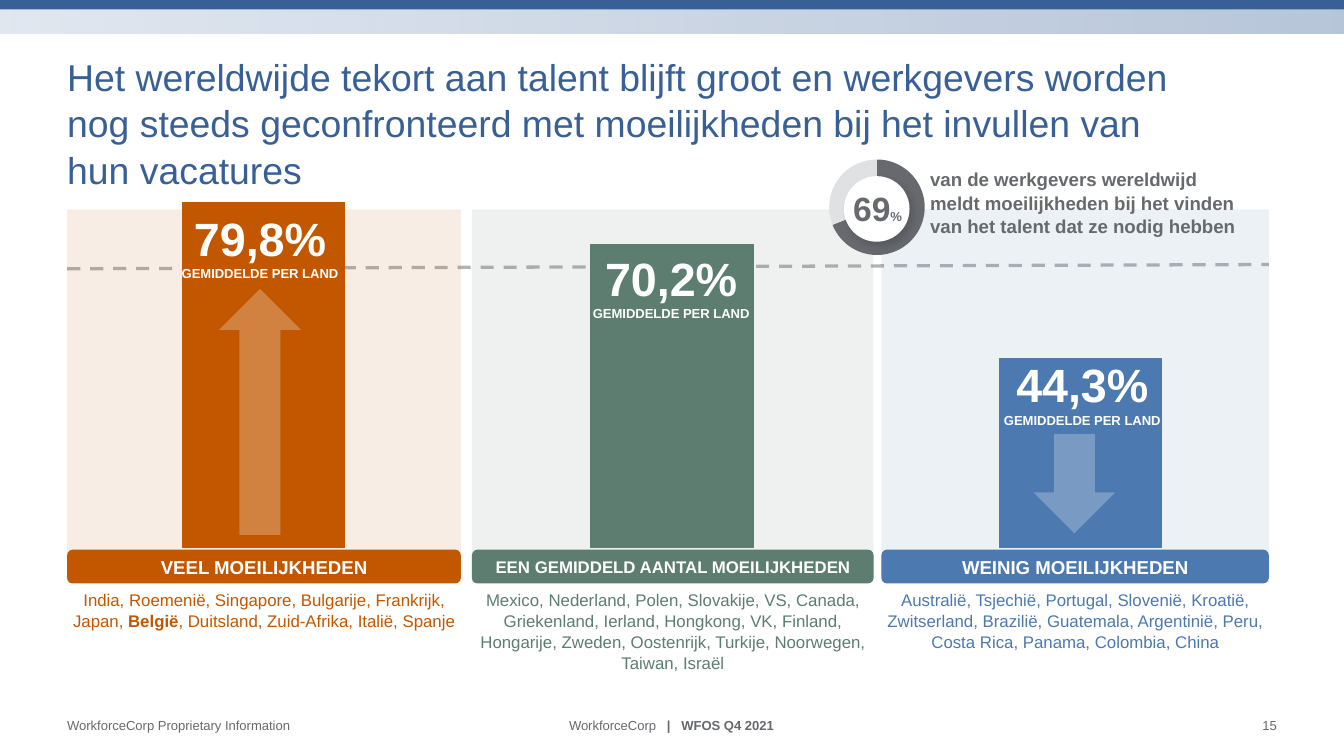
from dataclasses import dataclass
from typing import NamedTuple

from lxml import etree
from pptx import Presentation
from pptx.chart.data import CategoryChartData
from pptx.dml.color import RGBColor
from pptx.enum.chart import XL_CHART_TYPE as ChartType
from pptx.enum.dml import MSO_LINE_DASH_STYLE as Dash
from pptx.enum.shapes import MSO_CONNECTOR as Connector, MSO_SHAPE as Shape
from pptx.enum.text import MSO_ANCHOR as Anchor, PP_ALIGN as Align
from pptx.oxml import parse_xml
from pptx.oxml.ns import nsdecls, qn
from pptx.util import Cm, Pt

FONT = "Arial"
NAVY, ORANGE, GREEN, BLUE = "386097", "C25700", "5C7D70", "4C79AF"
GRAY, PALE_GRAY, WHITE = "67696F", "E0E1E3", "FFFFFF"
MARGIN = 1.27
BAR_STEP = 7.77


class Box(NamedTuple):
    left: float
    top: float
    width: float
    height: float

    def lengths(self):
        return [Cm(value) for value in self]


class Run(NamedTuple):
    text: str
    size: float
    bold: bool = False


@dataclass
class Group:
    label: str
    label_size: float
    color: str
    left: float
    width: float
    share: str
    share_top: float
    bar_value: int
    countries: list[Run]


GROUPS = [
    Group("VEEL MOEILIJKHEDEN", 10, ORANGE, MARGIN, 7.44, "79,8%", 3.96, 100, [
        Run("India, Roemenië, Singapore, Bulgarije, Frankrijk, Japan, ", 9),
        Run("België", 9, True),
        Run(", Duitsland, Zuid-Afrika, Italië, Spanje", 9)]),
    Group("EEN GEMIDDELD AANTAL MOEILIJKHEDEN", 9, GREEN, 8.92, 7.59, "70,2%", 4.72, 88, [
        Run("Mexico, Nederland, Polen, Slovakije, VS, Canada, Griekenland, Ierland, "
            "Hongkong, VK, Finland, Hongarije, Zweden, Oostenrijk, Turkije, "
            "Noorwegen, Taiwan, Israël", 9)]),
    Group("WEINIG MOEILIJKHEDEN", 10, BLUE, 16.66, 7.32, "44,3%", 6.73, 55, [
        Run("Australië, Tsjechië, Portugal, Slovenië, Kroatië, Zwitserland, Brazilië, "
            "Guatemala, Argentinië, Peru, Costa Rica, Panama, Colombia, China", 9)]),
]


def rgb(color: str) -> RGBColor:
    return RGBColor.from_string(color)


def set_opacity(properties, percents: list[int]) -> None:
    """Give each colour below the properties element its opacity, in order."""
    for color, percent in zip(properties.iter(qn("a:srgbClr")), percents):
        etree.SubElement(color, qn("a:alpha")).set("val", str(percent * 1000))


def write(shape, runs: list[Run], color: str, align=Align.LEFT, spacing=None) -> None:
    paragraph = shape.text_frame.paragraphs[0]
    paragraph.alignment = align
    if spacing:
        paragraph.line_spacing = spacing
    paragraph.font.name = FONT
    paragraph.font.color.rgb = rgb(color)
    sizes, weights = {run.size for run in runs}, {run.bold for run in runs}
    if len(sizes) == 1:
        paragraph.font.size = Pt(runs[0].size)
    if len(weights) == 1:
        paragraph.font.bold = runs[0].bold
    for item in runs:
        if item.text == "\v":
            paragraph.add_line_break()
            continue
        run = paragraph.add_run()
        run.text = item.text
        if len(sizes) > 1:
            run.font.size = Pt(item.size)
        if len(weights) > 1:
            run.font.bold = item.bold


def add_text(slide, box: Box, runs: list[Run], color: str, align=Align.LEFT,
             anchor=Anchor.TOP, spacing=None, wrap=True) -> None:
    text_box = slide.shapes.add_textbox(*box.lengths())
    frame = text_box.text_frame
    frame.margin_left = frame.margin_right = frame.margin_top = frame.margin_bottom = 0
    frame.word_wrap = wrap
    frame.vertical_anchor = anchor
    write(text_box, runs, color, align, spacing)


def add_block(slide, kind, box: Box, color: str, opacity: int = 100):
    shape = slide.shapes.add_shape(kind, *box.lengths())
    shape.shadow.inherit = False
    shape.line.fill.background()
    shape.fill.solid()
    shape.fill.fore_color.rgb = rgb(color)
    if opacity < 100:
        set_opacity(shape.fill._xPr, [opacity])
    return shape


def add_plain_chart(slide, kind, box: Box, values: list[int], colors: list[str], plot: Box):
    """Add a chart without title or legend; plot is the inner area in fractions."""
    data = CategoryChartData()
    data.categories = [str(number + 1) for number in range(len(values))]
    data.add_series("Series 1", values)
    chart = slide.shapes.add_chart(kind, *box.lengths(), data).chart
    chart.has_legend = chart.has_title = False
    chart.font.name, chart.font.size = FONT, Pt(10)
    chart.font.color.rgb = rgb(NAVY)
    chart.plots[0].vary_by_categories = False
    for index, color in enumerate(colors):
        fill = chart.plots[0].series[0].points[index].format.fill
        fill.solid()
        fill.fore_color.rgb = rgb(color)
    plot_area = chart._chartSpace.find(".//" + qn("c:plotArea"))
    for layout in plot_area.findall(qn("c:layout")):
        plot_area.remove(layout)
    plot_area.insert(0, parse_xml(
        f'<c:layout {nsdecls("c")}><c:manualLayout><c:layoutTarget val="inner"/>'
        '<c:xMode val="edge"/><c:yMode val="edge"/>'
        f'<c:x val="{plot.left}"/><c:y val="{plot.top}"/>'
        f'<c:w val="{plot.width}"/><c:h val="{plot.height}"/>'
        '</c:manualLayout></c:layout>'))
    return chart


def add_header(slide) -> None:
    band = add_block(slide, Shape.RECTANGLE, Box(0, 0, 25.4, 0.64), NAVY)
    band.fill.gradient()
    band.fill.gradient_angle = 0
    for stop in band.fill.gradient_stops:
        stop.color.rgb = rgb(NAVY)
    set_opacity(band.fill._xPr, [15, 36])
    add_block(slide, Shape.RECTANGLE, Box(0, 0, 25.4, 0.18), NAVY)
    title = ["Het wereldwijde tekort aan talent blijft groot en werkgevers worden", "\v",
             "nog steeds geconfronteerd met moeilijkheden bij het invullen van", "\v",
             "hun vacatures"]
    add_text(slide, Box(MARGIN, 1.14, 22.86, 2.34), [Run(text, 20) for text in title],
             NAVY, anchor=Anchor.MIDDLE, spacing=1.04)


def add_footer(slide) -> None:
    for left, width, align, runs in [
        (MARGIN, 4.95, Align.LEFT, [Run("WorkforceCorp Proprietary Information", 7)]),
        (9.45, 6.48, Align.CENTER, [Run("WorkforceCorp   ", 7), Run("|   WFOS Q4 2021", 7, True)]),
        (22.15, 1.98, Align.RIGHT, [Run("15", 7)]),
    ]:
        add_text(slide, Box(left, 13.56, width, 0.3), runs, GRAY, align, Anchor.MIDDLE)


def add_average_line(slide) -> None:
    line = slide.shapes.add_connector(Connector.STRAIGHT, Cm(MARGIN), Cm(5.08), Cm(23.98), Cm(5))
    line.line.color.rgb = rgb(GRAY)
    line.line.width = Pt(1.75)
    line.line.dash_style = Dash.DASH
    properties = line._element.spPr
    set_opacity(properties, [50])
    etree.SubElement(properties, qn("a:effectLst"))


def add_bars(slide) -> None:
    for group in GROUPS:
        add_block(slide, Shape.RECTANGLE, Box(group.left, 3.96, group.width, 7.04), group.color, 10)
    chart = add_plain_chart(slide, ChartType.COLUMN_STACKED, Box(0.64, 2.82, 24.13, 7.7),
                            [group.bar_value for group in GROUPS],
                            [group.color for group in GROUPS], Box(0.02, 0.13, 0.96, 0.85))
    chart.plots[0].gap_width, chart.plots[0].overlap = 150, 100
    chart.value_axis.minimum_scale, chart.value_axis.maximum_scale = 0, 100
    chart.value_axis.has_major_gridlines = False
    chart.value_axis.visible = chart.category_axis.visible = False


def add_group_texts(slide, index: int, group: Group) -> None:
    label = add_block(slide, Shape.ROUNDED_RECTANGLE,
                      Box(group.left, 10.39, group.width, 0.64), group.color)
    label.text_frame.vertical_anchor = Anchor.MIDDLE
    write(label, [Run(group.label, group.label_size, True)], WHITE, Align.CENTER)
    add_text(slide, Box(group.left, 11.13, group.width, 1.55), group.countries,
             group.color, Align.CENTER, spacing=1.04)
    add_text(slide, Box(3.38 + index * BAR_STEP, group.share_top, 3.07, 1.37),
             [Run(group.share, 25, True), Run("\v", 25, True),
              Run("GEMIDDELDE PER LAND", 7, True)], WHITE, Align.CENTER)


def add_worldwide_share(slide) -> None:
    add_text(slide, Box(17.58, 3.1, 5.85, 1.45),
             [Run("van de werkgevers wereldwijd meldt moeilijkheden bij het vinden "
                  "van het talent dat ze nodig hebben", 10, True)],
             GRAY, anchor=Anchor.MIDDLE, spacing=1.04)
    add_plain_chart(slide, ChartType.PIE, Box(15.32, 2.69, 2.51, 2.51), [69, 31],
                    [GRAY, PALE_GRAY], Box(0.14, 0.13, 0.72, 0.72))
    hole = add_block(slide, Shape.OVAL, Box(15.95, 3.33, 1.24, 1.24), WHITE)
    effects = hole._element.spPr.find(qn("a:effectLst"))
    effects.append(parse_xml(
        f'<a:outerShdw {nsdecls("a")} blurRad="{Pt(4)}" dist="{Pt(3)}" dir="2700000">'
        '<a:srgbClr val="000000"><a:alpha val="15000"/></a:srgbClr></a:outerShdw>'))
    add_text(slide, Box(16.1, 3.56, 0.97, 0.76), [Run("69", 18, True), Run("%", 7, True)],
             GRAY, Align.CENTER, wrap=False)


def main() -> None:
    presentation = Presentation()
    presentation.slide_width, presentation.slide_height = Cm(25.4), Cm(14.29)
    slide = presentation.slides.add_slide(presentation.slide_layouts[6])
    add_footer(slide)
    add_header(slide)
    add_average_line(slide)
    add_bars(slide)
    for index, group in enumerate(GROUPS):
        add_group_texts(slide, index, group)
    add_worldwide_share(slide)
    add_block(slide, Shape.UP_ARROW, Box(4.14, 5.46, 1.55, 4.65), WHITE, 25)
    add_block(slide, Shape.UP_ARROW, Box(19.53, 8.2, 1.55, 1.88), WHITE, 25).rotation = 180
    presentation.save("out.pptx")


if __name__ == "__main__":
    main()
